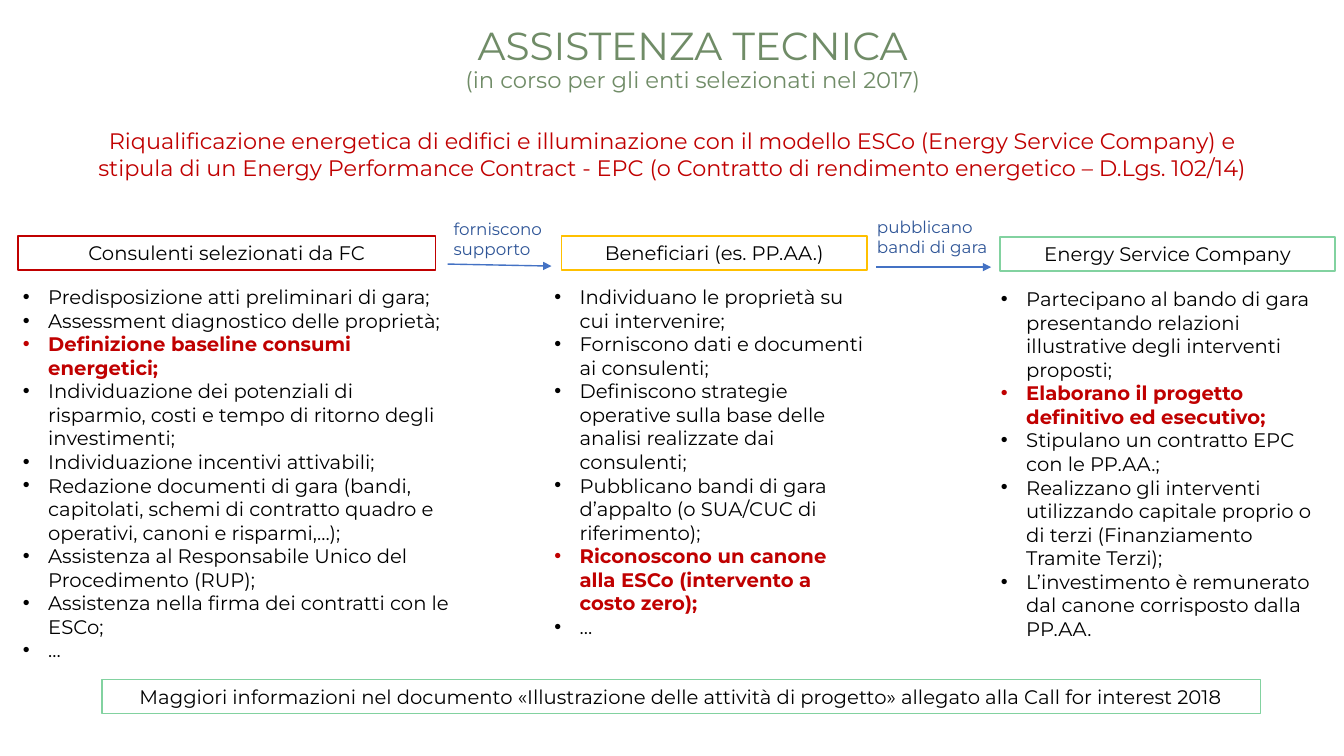
from dataclasses import dataclass

from lxml import etree
from pptx import Presentation
from pptx.dml.color import RGBColor
from pptx.enum import shapes, text
from pptx.oxml import ns
from pptx.util import Inches, Pt


@dataclass(frozen=True)
class Theme:
    font: str = "Montserrat"
    title_color: str = "708C67"
    ink: str = "000000"
    red: str = "C00000"
    yellow: str = "FFC000"
    green: str = "82D2A0"
    arrow: str = "4472C4"
    arrow_label: str = "2F5597"
    title_size: float = 27.9
    subtitle_size: float = 16.2
    lead_size: float = 16
    body_size: float = 14
    label_size: float = 12


THEME = Theme()

# Each column: heading, border colour, heading frame, list frame,
# list items, positions of the highlighted items
COLUMNS = [
    ("Consulenti selezionati da FC", THEME.red,
     (0.18, 2.34, 4.14, 0.34), (0.13, 2.78, 4.47, 3.87),
     ["Predisposizione atti preliminari di gara;",
      "Assessment diagnostico delle proprietà;",
      "Definizione baseline consumi energetici;",
      "Individuazione dei potenziali di risparmio, costi e tempo di ritorno degli investimenti;",
      "Individuazione incentivi attivabili;",
      "Redazione documenti di gara (bandi, capitolati, schemi di contratto quadro e "
      "operativi, canoni e risparmi,…);",
      "Assistenza al Responsabile Unico del Procedimento (RUP);",
      "Assistenza nella firma dei contratti con le ESCo;",
      "…"], {2}),
    ("Beneficiari (es. PP.AA.)", THEME.yellow,
     (5.57, 2.34, 3.03, 0.34), (5.4, 2.78, 3.29, 3.87),
     ["Individuano le proprietà su cui intervenire;",
      "Forniscono dati e documenti ai consulenti;",
      "Definiscono strategie operative sulla base delle analisi realizzate dai consulenti;",
      "Pubblicano bandi di gara d’appalto (o SUA/CUC di riferimento);",
      "Riconoscono un canone alla ESCo (intervento a costo zero);",
      "…"], {4}),
    ("Energy Service Company", THEME.green,
     (9.92, 2.35, 3.32, 0.34), (9.83, 2.8, 3.4, 3.64),
     ["Partecipano al bando di gara presentando relazioni illustrative degli interventi proposti;",
      "Elaborano il progetto definitivo ed esecutivo;",
      "Stipulano un contratto EPC con le PP.AA.;",
      "Realizzano gli interventi utilizzando capitale proprio o di terzi "
      "(Finanziamento Tramite Terzi);",
      "L’investimento è remunerato dal canone corrisposto dalla PP.AA."], {1}),
]

# Each arrow: start, end, label, label frame
ARROWS = [
    ((4.44, 2.62), (5.47, 2.64), "forniscono supporto", (4.4, 2.12, 1.27, 0.5)),
    ((8.69, 2.65), (9.83, 2.65), "pubblicano bandi di gara", (8.6, 2.1, 1.36, 0.5)),
]


def style(item, size, color, bold=False):
    """Format the font of a paragraph or a run."""
    item.font.name = THEME.font
    item.font.size = Pt(size)
    item.font.bold = bold
    item.font.color.rgb = RGBColor.from_string(color)


def add_text(page, frame, wording, size, color, align=text.PP_ALIGN.LEFT):
    box = page.shapes.add_textbox(*map(Inches, frame))
    box.text_frame.word_wrap = True
    box.text_frame.text = wording
    for para in box.text_frame.paragraphs:
        para.alignment = align
        for span in para.runs:
            style(span, size, color)
    return box


def add_title(page):
    box = add_text(page, (2.41, 0.22, 8.92, 0.89),
                   "ASSISTENZA TECNICA\v(in corso per gli enti selezionati nel 2017)",
                   THEME.title_size, THEME.title_color, text.PP_ALIGN.CENTER)
    para = box.text_frame.paragraphs[0]
    para.line_spacing = 0.9
    para.runs[1].font.size = Pt(THEME.subtitle_size)


def add_framed_text(page, frame, wording, border, width=1.25):
    box = page.shapes.add_shape(shapes.MSO_SHAPE.RECTANGLE, *map(Inches, frame))
    box.shadow.inherit = False
    box.fill.background()
    box.line.color.rgb = RGBColor.from_string(border)
    box.line.width = Pt(width)
    box.text_frame.word_wrap = True
    box.text_frame.vertical_anchor = text.MSO_ANCHOR.MIDDLE
    box.text_frame.text = wording
    para = box.text_frame.paragraphs[0]
    para.alignment = text.PP_ALIGN.CENTER
    style(para.runs[0], THEME.body_size, THEME.ink)


def add_bullets(page, frame, items, highlighted):
    box = page.shapes.add_textbox(*map(Inches, frame))
    box.text_frame.word_wrap = True
    box.text_frame.text = "\n".join(items)
    for index, para in enumerate(box.text_frame.paragraphs):
        props = para._p.get_or_add_pPr()
        props.set("marL", str(Inches(0.25)))
        props.set("indent", str(-Inches(0.25)))
        etree.SubElement(props, ns.qn("a:buFont")).set("typeface", "Arial")
        etree.SubElement(props, ns.qn("a:buChar")).set("char", "•")
        strong = index in highlighted
        style(para.runs[0], THEME.body_size, THEME.red if strong else THEME.ink, strong)


def add_arrow(page, start, end):
    arrow = page.shapes.add_connector(shapes.MSO_CONNECTOR.STRAIGHT,
                                      *map(Inches, start + end))
    arrow.line.color.rgb = RGBColor.from_string(THEME.arrow)
    arrow.line.width = Pt(1)
    etree.SubElement(arrow.line._get_or_add_ln(), ns.qn("a:tailEnd")).set("type", "triangle")
    etree.SubElement(arrow._element.spPr, ns.qn("a:effectLst"))


def main():
    deck = Presentation()
    deck.slide_width, deck.slide_height = Inches(13.33), Inches(7.5)
    page = deck.slides.add_slide(deck.slide_layouts[6])

    # Title and lead sentence
    add_title(page)
    add_text(page, (0.74, 1.21, 11.86, 0.64),
             "Riqualificazione energetica di edifici e illuminazione con il modello ESCo "
             "(Energy Service Company) e stipula di un Energy Performance Contract - EPC "
             "(o Contratto di rendimento energetico – D.Lgs. 102/14)",
             THEME.lead_size, THEME.red, text.PP_ALIGN.CENTER)

    # Three actors with their tasks
    for heading, border, heading_frame, list_frame, items, highlighted in COLUMNS:
        add_framed_text(page, heading_frame, heading, border)
        add_bullets(page, list_frame, items, highlighted)

    # Links between the actors
    for start, end, label, label_frame in ARROWS:
        add_arrow(page, start, end)
        add_text(page, label_frame, label, THEME.label_size, THEME.arrow_label)

    # Closing note
    add_framed_text(page, (1.01, 6.74, 11.49, 0.34),
                    "Maggiori informazioni nel documento «Illustrazione delle attività di "
                    "progetto» allegato alla Call for interest 2018", THEME.green, 1)

    deck.save("out.pptx")


if __name__ == "__main__":
    main()
